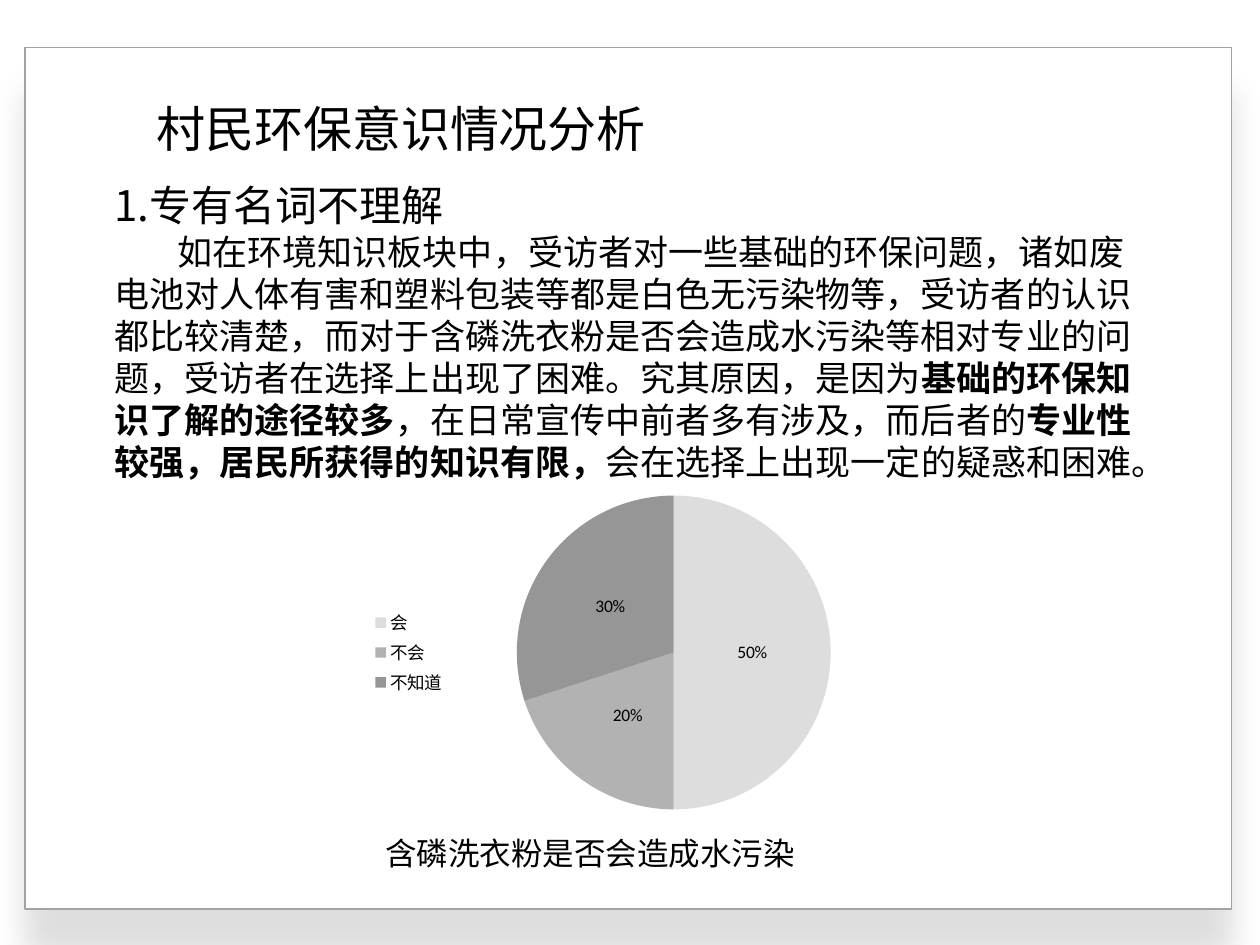
from lxml import etree
from pptx import Presentation
from pptx.chart.data import CategoryChartData
from pptx.dml.color import RGBColor
from pptx.enum.chart import XL_CHART_TYPE, XL_LABEL_POSITION, XL_LEGEND_POSITION
from pptx.enum.shapes import MSO_SHAPE
from pptx.enum.text import MSO_ANCHOR, MSO_AUTO_SIZE, PP_ALIGN
from pptx.oxml import parse_xml
from pptx.oxml.ns import nsdecls, qn
from pptx.util import Cm, Pt

PIE = XL_CHART_TYPE.PIE
LABEL_CENTER = XL_LABEL_POSITION.CENTER
LEGEND_LEFT = XL_LEGEND_POSITION.LEFT
RECTANGLE = MSO_SHAPE.RECTANGLE
TOP = MSO_ANCHOR.TOP
NO_AUTOFIT = MSO_AUTO_SIZE.NONE
LEFT = PP_ALIGN.LEFT

TEXT_FONT = "Noto Sans CJK SC"
CHART_FONT = "Calibri"
LINE_FACTOR = 1.2
COLORS = {
    "paper": "FFFFFF",
    "border": "A3A3A3",
    "text": "000000",
    "yes": "DDDDDD",
    "no": "B2B2B2",
    "unknown": "969696",
}
ANSWERS = [("会", 0.5, "yes"), ("不会", 0.2, "no"), ("不知道", 0.3, "unknown")]
EXPLANATION = [
    ("如在环境知识板块中，受访者对一些基础的环保问题，诸如废电池对人体有害和塑料包装等都是白色无污染物等，"
     "受访者的认识都比较清楚，而对于含磷洗衣粉是否会造成水污染等相对专业的问题，"
     "受访者在选择上出现了困难。究其原因，是因为", False),
    ("基础的环保知识了解的途径较多", True),
    ("，在日常宣传中前者多有涉及，而后者的", False),
    ("专业性较强，居民所获得的知识有限，", True),
    ("会在选择上出现一定的疑惑和困难。", False),
]


def color(name):
    return RGBColor.from_string(COLORS[name])


def prepare_frame(shape):
    frame = shape.text_frame
    frame.word_wrap = True
    frame.auto_size = NO_AUTOFIT
    frame.vertical_anchor = TOP
    return frame


def fill_paragraph(paragraph, runs, size):
    paragraph.alignment = LEFT
    paragraph.space_before = Pt(0)
    paragraph.line_spacing = Pt(size * LINE_FACTOR)
    for text, bold in runs:
        run = paragraph.add_run()
        run.text = text
        run.font.size = Pt(size)
        run.font.bold = bold
        run.font.name = TEXT_FONT
        run.font.color.rgb = color("text")
        east_asian = etree.SubElement(run.font._element, qn("a:ea"))
        east_asian.set("typeface", TEXT_FONT)


def add_page_frame(slide, box):
    shape = slide.shapes.add_shape(RECTANGLE, *box)
    shape.fill.solid()
    shape.fill.fore_color.rgb = color("paper")
    shape.line.color.rgb = color("border")
    shape.line.width = Pt(1)
    # Soft shadow straight below the page
    shape._element.spPr.append(parse_xml(
        f'<a:effectLst {nsdecls("a")}>'
        f'<a:outerShdw blurRad="{Pt(18)}" dist="{Pt(26)}" dir="5400000" rotWithShape="0">'
        '<a:srgbClr val="000000"><a:alpha val="12000"/></a:srgbClr>'
        '</a:outerShdw></a:effectLst>'))
    # The page lies behind the title placeholder
    slide.shapes._spTree.insert(2, shape._element)


def place_title(slide, box):
    title = slide.shapes.title
    title.left, title.top, title.width, title.height = box
    frame = prepare_frame(title)
    fill_paragraph(frame.paragraphs[0], [("村民环保意识情况分析", False)], 28)


def add_explanation(slide, box):
    frame = prepare_frame(slide.shapes.add_textbox(*box))
    fill_paragraph(frame.paragraphs[0], [("1.专有名词不理解", False)], 24)
    paragraph = frame.add_paragraph()
    paragraph._p.get_or_add_pPr().set("indent", str(Cm(1.27)))
    fill_paragraph(paragraph, EXPLANATION, 20)


def add_answer_chart(slide, box):
    data = CategoryChartData(number_format="0%")
    data.categories = [name for name, _, _ in ANSWERS]
    data.add_series("Series 1", [share for _, share, _ in ANSWERS])
    chart = slide.shapes.add_chart(PIE, *box, data).chart
    chart.has_title = False
    chart.font.size = Pt(10)
    chart.font.name = CHART_FONT
    chart.font.color.rgb = color("text")

    # Legend
    chart.has_legend = True
    chart.legend.position = LEGEND_LEFT
    chart.legend.include_in_layout = True

    # Slices and labels
    plot = chart.plots[0]
    plot.vary_by_categories = True
    for index, (_, _, shade) in enumerate(ANSWERS):
        fill = plot.series[0].points[index].format.fill
        fill.solid()
        fill.fore_color.rgb = color(shade)
    plot.has_data_labels = True
    labels = plot.data_labels
    labels.show_value = True
    labels.show_percentage = False
    labels.number_format = "0%"
    labels.number_format_is_linked = False
    labels.position = LABEL_CENTER
    labels.font.size = Pt(10)
    labels.font.name = CHART_FONT
    labels.font.color.rgb = color("text")

    # Plot area as fractions of the chart
    plot_area = chart._chartSpace.chart.plotArea
    for old_layout in plot_area.findall(qn("c:layout")):
        plot_area.remove(old_layout)
    plot_area.insert(0, parse_xml(
        f'<c:layout {nsdecls("c")}><c:manualLayout><c:layoutTarget val="inner"/>'
        '<c:xMode val="edge"/><c:yMode val="edge"/><c:x val="0.26"/><c:y val="0.055"/>'
        '<c:w val="0.52"/><c:h val="0.89"/></c:manualLayout></c:layout>'))


def add_caption(slide, box):
    frame = prepare_frame(slide.shapes.add_textbox(*box))
    fill_paragraph(frame.paragraphs[0], [("含磷洗衣粉是否会造成水污染", False)], 18)


def main():
    presentation = Presentation()
    presentation.slide_width = Cm(25.4)
    presentation.slide_height = Cm(19.05)
    title_only = presentation.slide_layouts.get_by_name("Title Only")
    slide = presentation.slides.add_slide(title_only)

    add_page_frame(slide, (Cm(0.5), Cm(0.96), Cm(24.33), Cm(17.37)))
    place_title(slide, (Cm(2.9), Cm(1.85), Cm(10.5), Cm(2.29)))
    add_explanation(slide, (Cm(2.06), Cm(3.5), Cm(21.31), Cm(6.4)))
    add_answer_chart(slide, (Cm(7.24), Cm(9.6), Cm(12.2), Cm(7.11)))
    add_caption(slide, (Cm(7.52), Cm(16.69), Cm(9.2), Cm(1.02)))

    presentation.save("out.pptx")


if __name__ == "__main__":
    main()
